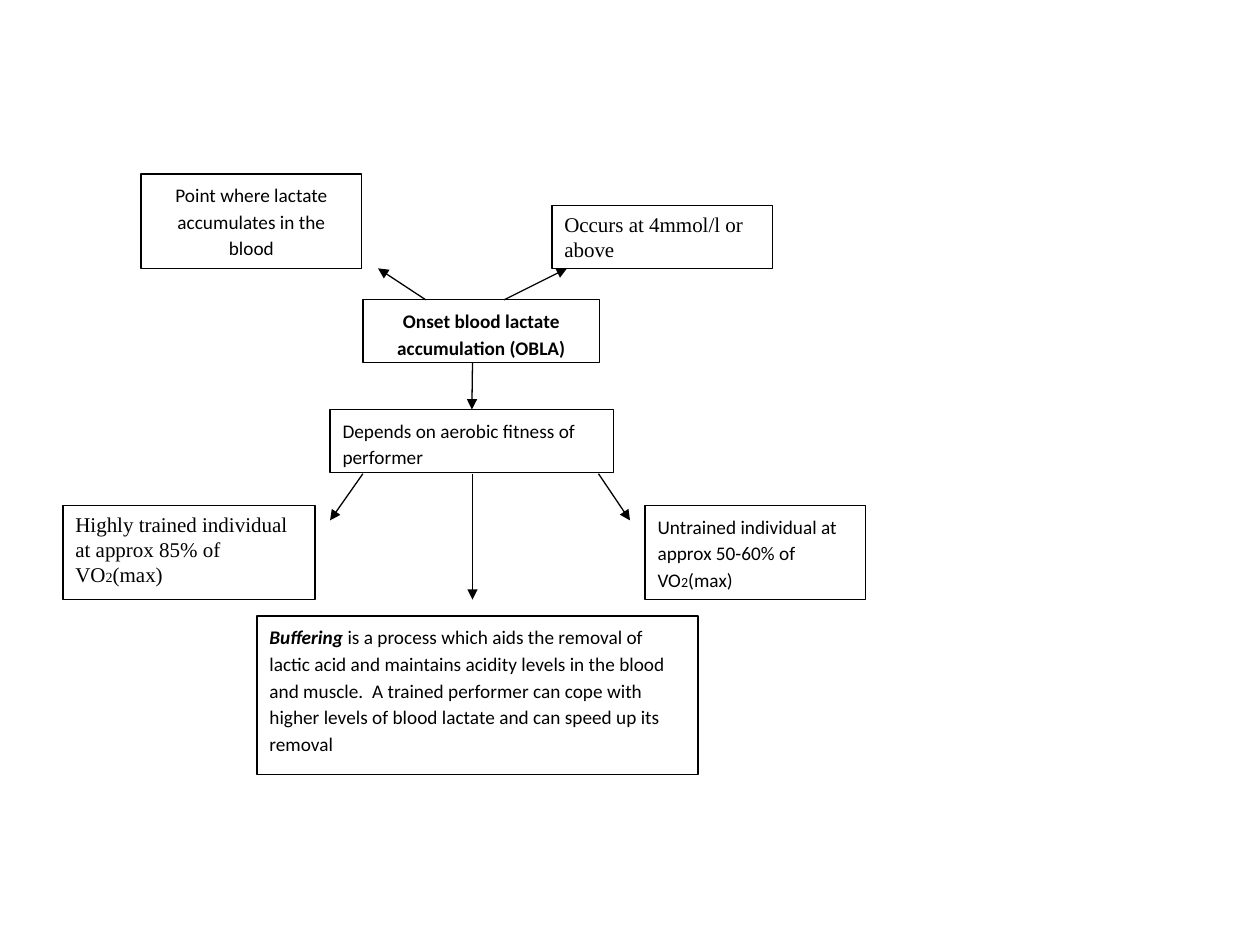
from lxml import etree
from pptx import Presentation
from pptx.dml.color import RGBColor
from pptx.enum.shapes import MSO_CONNECTOR as CONN, MSO_SHAPE as SHAPE
from pptx.enum.text import MSO_ANCHOR as ANCHOR, PP_ALIGN as ALIGN
from pptx.oxml.ns import qn
from pptx.util import Inches, Pt

COLORS = {"ink": "000000", "paper": "FFFFFF"}
STYLES = {
    "sans": {"font": "Calibri", "size": 11, "spacing": 1.15, "after": 10},
    "serif": {"font": "Times New Roman", "size": 12, "spacing": 1.0, "after": 6},
}
SUB_SIZE = 8

BOXES = {
    "obla": ((2.88, 2.38, 1.88, 0.5), "sans", ALIGN.CENTER,
             [("Onset blood lactate accumulation (OBLA)", "b")]),
    "fitness": ((2.62, 3.25, 2.25, 0.5), "sans", ALIGN.LEFT,
                [("Depends on aerobic fitness of performer", "")]),
    "level": ((4.38, 1.63, 1.75, 0.5), "serif", ALIGN.LEFT,
              [("Occurs at 4mmol/l or above", "")]),
    "untrained": ((5.12, 4.01, 1.75, 0.75), "sans", ALIGN.LEFT,
                  [("Untrained individual at approx 50-60% of VO", ""),
                   ("2", "sub"), ("(max)", "")]),
    "trained": ((0.5, 4.01, 2, 0.75), "serif", ALIGN.LEFT,
                [("Highly trained individual at approx 85% of VO", ""),
                 ("2", "sub"), ("(max)", "")]),
    "buffering": ((2.04, 4.89, 3.5, 1.26), "sans", ALIGN.LEFT,
                  [("Buffering", "bi"),
                   (" is a process which aids the removal of lactic acid and "
                    "maintains acidity levels in the blood and muscle.  A trained "
                    "performer can cope with higher levels of blood lactate and "
                    "can speed up its removal", "")]),
    "definition": ((1.12, 1.38, 1.75, 0.75), "sans", ALIGN.CENTER,
                   [("Point where lactate accumulates in the blood", "")]),
}

ARROWS = [
    ((3.38, 2.38), (3, 2.13), None),
    ((4, 2.38), (4.5, 2.13), None),
    ((3.75, 2.88), (3.75, 3.25), "fitness"),
    ((2.88, 3.76), (2.62, 4.13), None),
    ((4.75, 3.76), (5, 4.13), None),
    ((3.75, 3.76), (3.75, 4.76), None),
]


def rgb(name):
    return RGBColor.from_string(COLORS[name])


def set_line(line):
    line.color.rgb = rgb("ink")
    line.width = Pt(0.75)


def add_box(slide, place, style_name, align, runs):
    style = STYLES[style_name]
    sp = slide.shapes.add_shape(SHAPE.RECTANGLE, *map(Inches, place))
    sp.shadow.inherit = False
    sp.fill.solid()
    sp.fill.fore_color.rgb = rgb("paper")
    set_line(sp.line)
    tf = sp.text_frame
    tf.word_wrap = True
    tf.vertical_anchor = ANCHOR.TOP
    p = tf.paragraphs[0]
    p.alignment = align
    p.line_spacing = style["spacing"]
    p.space_after = Pt(style["after"])
    for text, mark in runs:
        r = p.add_run()
        r.text = text
        r.font.name = style["font"]
        r.font.size = Pt(SUB_SIZE if mark == "sub" else style["size"])
        r.font.bold = mark in ("b", "bi")
        r.font.italic = mark == "bi"
        r.font.color.rgb = rgb("ink")
    return sp


def add_arrow(slide, start, end, target):
    cx = slide.shapes.add_connector(CONN.STRAIGHT, *map(Inches, start + end))
    if target is not None:
        cx.end_connect(target, 0)
    set_line(cx.line)
    ln = cx.line._get_or_add_ln()
    etree.SubElement(ln, qn("a:tailEnd"), type="triangle")
    etree.SubElement(cx._element.spPr, qn("a:effectLst"))


def main():
    prs = Presentation()
    prs.slide_width, prs.slide_height = Inches(10), Inches(7.5)
    slide = prs.slides.add_slide(prs.slide_layouts[6])
    boxes = {name: add_box(slide, *box) for name, box in BOXES.items()}
    for start, end, target in ARROWS:
        add_arrow(slide, start, end, boxes.get(target))
    prs.save("out.pptx")


if __name__ == "__main__":
    main()
